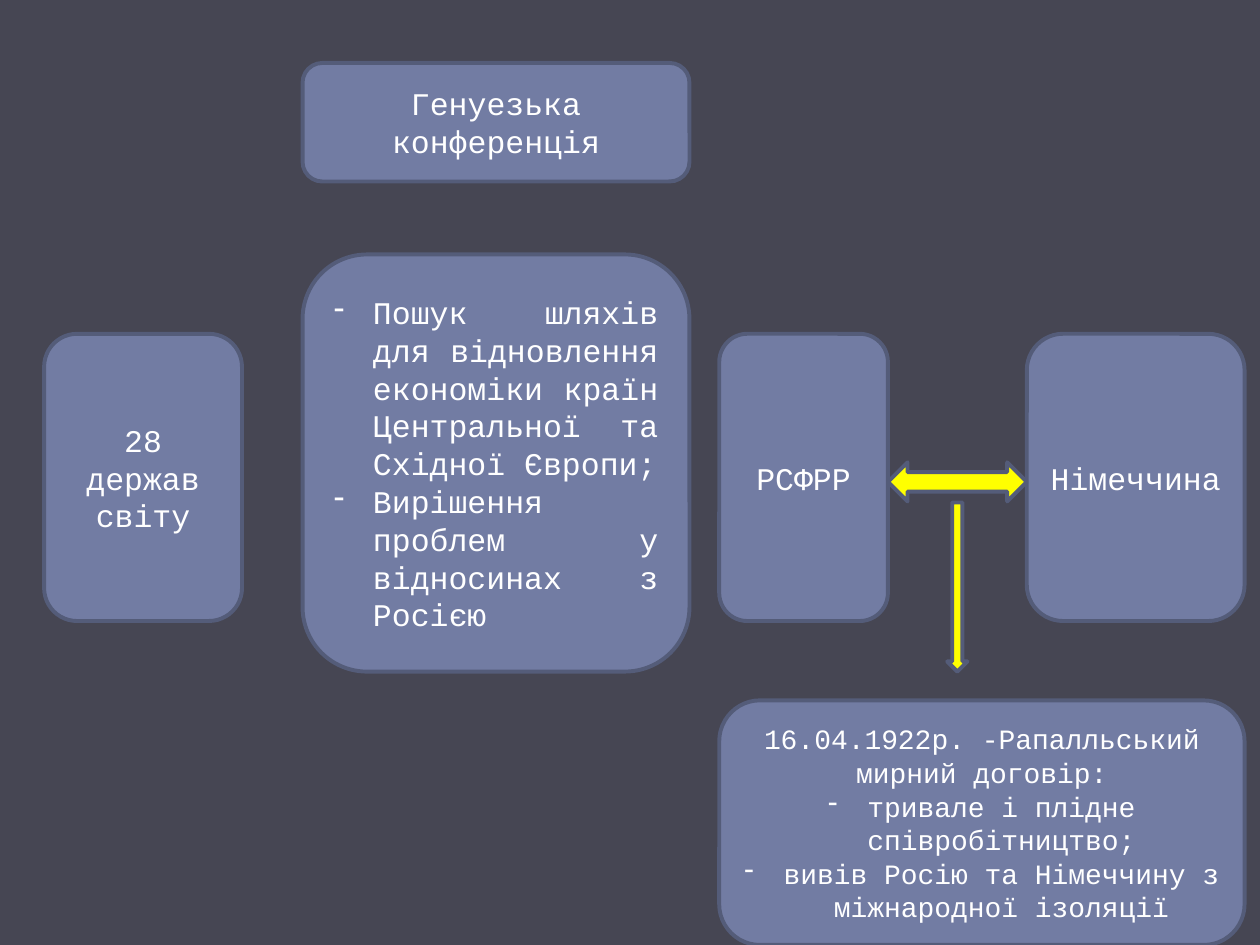
from dataclasses import dataclass

from lxml.etree import SubElement
from pptx import Presentation
from pptx.dml.color import RGBColor
from pptx.enum.shapes import MSO_SHAPE
from pptx.enum.text import MSO_ANCHOR, PP_ALIGN
from pptx.oxml.ns import qn
from pptx.util import Cm, Pt


@dataclass(frozen=True)
class Theme:
    back: RGBColor = RGBColor(0x46, 0x46, 0x53)
    box: RGBColor = RGBColor(0x72, 0x7C, 0xA3)
    edge: RGBColor = RGBColor(0x54, 0x5C, 0x79)
    arrow: RGBColor = RGBColor(0xFF, 0xFF, 0x00)
    text: RGBColor = RGBColor(0xFF, 0xFF, 0xFF)
    font: str = "Courier New"
    size: int = 18
    small: int = 16
    line: float = 2.25


THEME = Theme()

TITLE = ["Генуезька конференція"]
GOALS = [
    "- Пошук шляхів для відновлення економіки країн Центральної та Східної Європи;",
    "- Вирішення проблем у відносинах з Росією",
]
STATES = ["28 держав світу"]
RUSSIA = ["РСФРР"]
GERMANY = ["Німеччина"]
TREATY = [
    "16.04.1922р. -Рапалльський мирний договір:",
    "- тривале і плідне співробітництво;",
    "- вивів Росію та Німеччину з міжнародної ізоляції",
]

# Columns are (left, width) and rows are (top, height), in cm.
LEFT, MID = (0.89, 3.99), (6.1, 7.8)
RUS, GER = (14.5, 3.4), (20.7, 4.39)
PACT = (RUS[0], sum(GER) - RUS[0])
TOP, CORE, SIDE, LOW = (1.27, 2.39), (5.13, 8.41), (6.73, 5.79), (14.12, 4.93)

BOXES = [
    (TITLE, MID, TOP, {}),
    (GOALS, MID, CORE, {"align": PP_ALIGN.JUSTIFY}),
    (STATES, LEFT, SIDE, {}),
    (RUSSIA, RUS, SIDE, {}),
    (GERMANY, GER, SIDE, {}),
    (TREATY, PACT, LOW, {"size": THEME.small}),
]

GAP = (sum(RUS), GER[0] - sum(RUS))
LINK = (9.32, 0.79)
STEM = 0.41
DOWN = (GAP[0] + (GAP[1] - STEM) / 2, STEM)
DROP = (10.13, sum(CORE) - 10.13)
ARROWS = [
    (MSO_SHAPE.LEFT_RIGHT_ARROW, GAP, LINK),
    (MSO_SHAPE.DOWN_ARROW, DOWN, DROP),
]


def add_form(slide, kind, col, row, fill):
    form = slide.shapes.add_shape(kind, Cm(col[0]), Cm(row[0]), Cm(col[1]), Cm(row[1]))
    form.shadow.inherit = False
    form.fill.solid()
    form.fill.fore_color.rgb = fill
    form.line.color.rgb = THEME.edge
    form.line.width = Pt(THEME.line)
    return form


def add_dash(para):
    """Give the paragraph a hanging dash bullet."""
    props = para._p.get_or_add_pPr()
    props.set("marL", str(Cm(0.79)))
    props.set("indent", str(-Cm(0.79)))
    SubElement(props, qn("a:buFontTx"))
    SubElement(props, qn("a:buChar")).set("char", "-")


def put_text(form, lines, size=THEME.size, align=PP_ALIGN.CENTER):
    """Fill the shape with lines; a leading "- " marks a bullet."""
    frame = form.text_frame
    frame.word_wrap = True
    frame.vertical_anchor = MSO_ANCHOR.MIDDLE
    for i, line in enumerate(lines):
        para = frame.add_paragraph() if i else frame.paragraphs[0]
        para.alignment = align
        if line.startswith("- "):
            add_dash(para)
        run = para.add_run()
        run.text = line.removeprefix("- ")
        run.font.name = THEME.font
        run.font.size = Pt(size)
        run.font.color.rgb = THEME.text


def main():
    deck = Presentation()
    deck.slide_width, deck.slide_height = Cm(25.4), Cm(19.05)
    slide = deck.slides.add_slide(deck.slide_layouts[6])
    slide.background.fill.solid()
    slide.background.fill.fore_color.rgb = THEME.back
    for lines, col, row, style in BOXES:
        form = add_form(slide, MSO_SHAPE.ROUNDED_RECTANGLE, col, row, THEME.box)
        put_text(form, lines, **style)
    for kind, col, row in ARROWS:
        add_form(slide, kind, col, row, THEME.arrow)
    deck.save("out.pptx")


if __name__ == "__main__":
    main()
